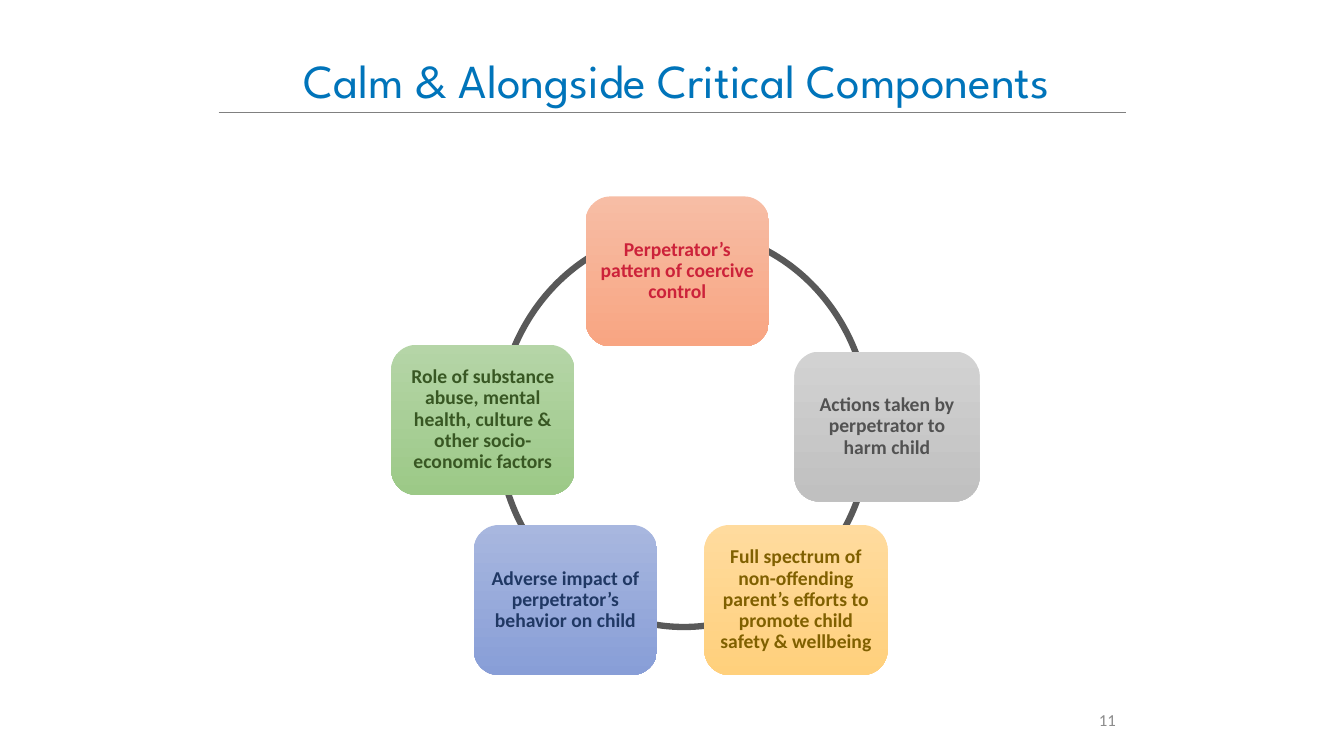
import pptx
import pptx.dml.color
import pptx.enum.shapes
import pptx.enum.text
import pptx.oxml
import pptx.oxml.ns
import pptx.util
from pptx.util import Cm

TITLE = "Calm & Alongside Critical Components"
PAGE_NUMBER = "11"

# text, left, top, width, text colour, gradient top, gradient bottom
CARDS = [
    ("Perpetrator’s pattern of coercive control",
     14.76, 4.95, 4.62, "CC223A", "F7BDA5", "F8A582"),
    ("Actions taken by perpetrator to harm child",
     20.02, 8.86, 4.67, "525252", "D2D2D2", "C0C0C0"),
    ("Full spectrum of non-offending parent’s efforts to promote child safety & wellbeing",
     17.75, 13.23, 4.62, "806000", "FFDB9E", "FFD07C"),
    ("Adverse impact of perpetrator’s behavior on child",
     11.94, 13.23, 4.62, "203864", "A8B7DF", "889ED7"),
    ("Role of substance abuse, mental health, culture & other socio-economic factors",
     9.86, 8.69, 4.62, "385723", "B5D5A7", "9CC987"),
]
CARD_HEIGHT = 3.78
CARD_INSET = 0.15

THEME = {
    "title_font": "League Spartan", "body_font": "Calibri",
    "title_size": 33.8, "card_size": 14, "number_size": 12,
    "title": "0074BA", "number": "8C8C8C", "ring": "595959", "rule": "808080",
}

SHAPE = pptx.enum.shapes.MSO_SHAPE
ALIGN = pptx.enum.text.PP_ALIGN
ANCHOR = pptx.enum.text.MSO_ANCHOR


def rgb(code):
    return pptx.dml.color.RGBColor.from_string(code)


def write(box, text, font, size, color, align, anchor, bold=False):
    """Fill the box with one styled paragraph and return that paragraph."""
    frame = box.text_frame
    frame.word_wrap = True
    frame.vertical_anchor = anchor
    para = frame.paragraphs[0]
    para.alignment = align
    span = para.add_run()
    span.text = text
    span.font.name = font
    span.font.size = pptx.util.Pt(size)
    span.font.bold = bold
    span.font.color.rgb = rgb(color)
    return para


def add_ring(page):
    ring = page.shapes.add_shape(SHAPE.OVAL, Cm(12.55), Cm(5.79), Cm(9.37), Cm(10.01))
    ring.shadow.inherit = False
    ring.fill.background()
    ring.line.color.rgb = rgb(THEME["ring"])
    ring.line.width = pptx.util.Pt(4.5)


def add_heading(page):
    box = page.shapes.add_textbox(Cm(5.64), Cm(1.17), Cm(22.86), Cm(1.65))
    para = write(box, TITLE, THEME["title_font"], THEME["title_size"],
                 THEME["title"], ALIGN.CENTER, ANCHOR.TOP)
    para.space_after = pptx.util.Pt(6)
    rule = page.shapes.add_connector(
        pptx.enum.shapes.MSO_CONNECTOR.STRAIGHT, Cm(5.51), Cm(2.84), Cm(28.37), Cm(2.84))
    rule.line.color.rgb = rgb(THEME["rule"])
    rule.line.width = pptx.util.Pt(0.5)
    rule._element.spPr.append(pptx.oxml.parse_xml(
        "<a:effectLst %s/>" % pptx.oxml.ns.nsdecls("a")))


def add_page_number(page):
    box = page.shapes.add_textbox(Cm(27.2), Cm(17.65), Cm(1.17), Cm(0.97))
    write(box, PAGE_NUMBER, THEME["body_font"], THEME["number_size"],
          THEME["number"], ALIGN.RIGHT, ANCHOR.MIDDLE)


def add_card(page, text, left, top, width, ink, light, dark):
    card = page.shapes.add_shape(
        SHAPE.ROUNDED_RECTANGLE, Cm(left), Cm(top), Cm(width), Cm(CARD_HEIGHT))
    card.shadow.inherit = False
    card.line.fill.background()
    card.fill.gradient()
    card.fill.gradient_angle = 270
    for stop, shade in zip(card.fill.gradient_stops, (light, dark)):
        stop.color.rgb = rgb(shade)
    frame = card.text_frame
    frame.margin_left = frame.margin_right = Cm(CARD_INSET)
    frame.margin_top = frame.margin_bottom = Cm(CARD_INSET)
    para = write(card, text, THEME["body_font"], THEME["card_size"],
                 ink, ALIGN.CENTER, ANCHOR.MIDDLE, bold=True)
    para.line_spacing = 0.9
    para.space_after = pptx.util.Pt(5)


def main():
    deck = pptx.Presentation()
    deck.slide_width, deck.slide_height = Cm(33.87), Cm(19.05)
    page = deck.slides.add_slide(deck.slide_layouts[6])
    add_ring(page)
    add_heading(page)
    add_page_number(page)
    for card in CARDS:
        add_card(page, *card)
    deck.save("out.pptx")


if __name__ == "__main__":
    main()
